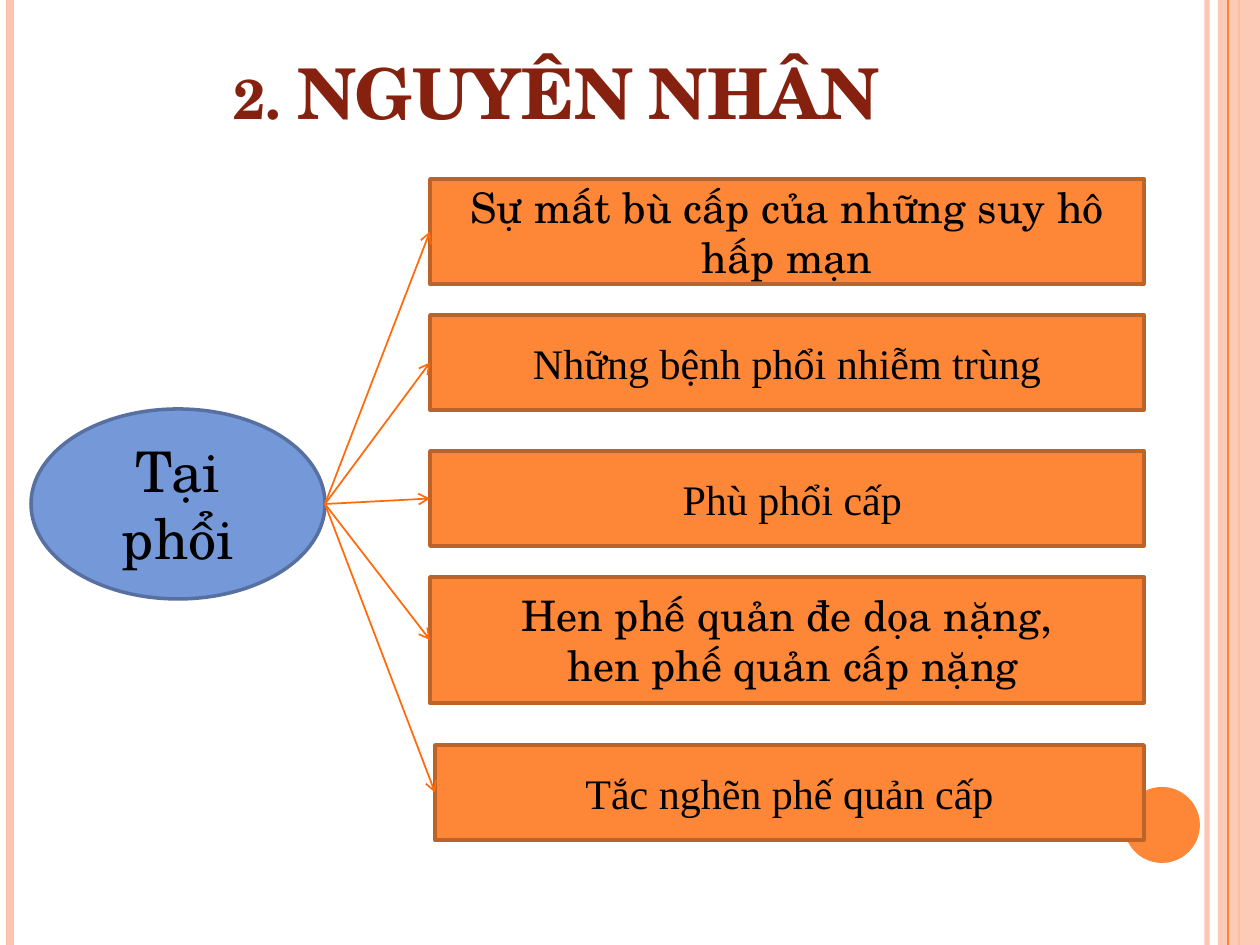
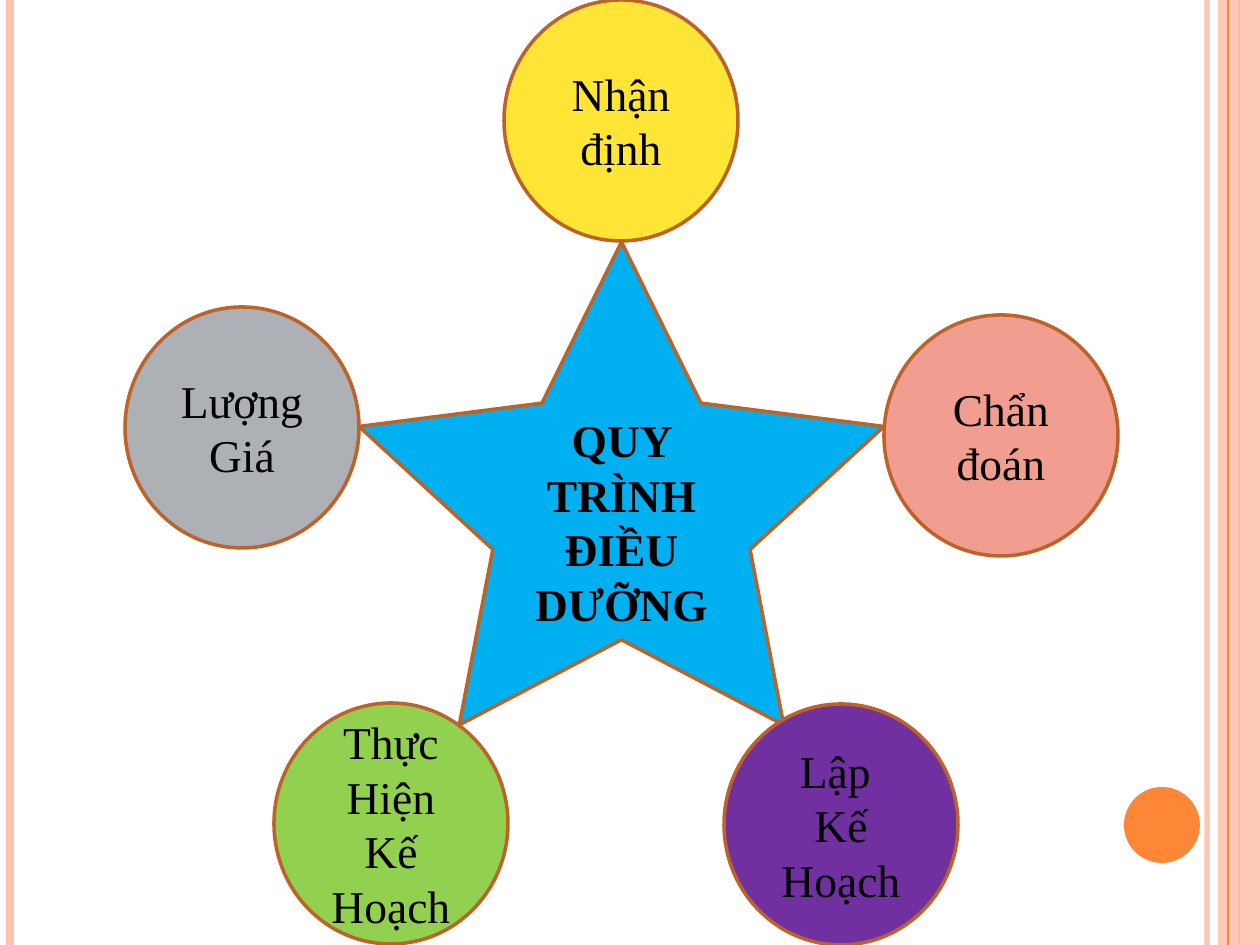
from dataclasses import dataclass
from lxml import etree
from pptx import Presentation
from pptx.dml.color import RGBColor
from pptx.enum.shapes import MSO_CONNECTOR, MSO_SHAPE
from pptx.enum.text import MSO_ANCHOR, MSO_AUTO_SIZE, PP_ALIGN
from pptx.oxml.ns import qn
from pptx.util import Emu, Pt

RECT, OVAL, STAR = MSO_SHAPE.RECTANGLE, MSO_SHAPE.OVAL, MSO_SHAPE.STAR_5_POINT
NODE = MSO_SHAPE.FLOWCHART_CONNECTOR
STRAIGHT = MSO_CONNECTOR.STRAIGHT
MIDDLE, BOTTOM = MSO_ANCHOR.MIDDLE, MSO_ANCHOR.BOTTOM
CENTER, NO_FIT = PP_ALIGN.CENTER, MSO_AUTO_SIZE.NONE
TITLE_ONLY, BLANK = 5, 6
LEFT_SIDE = 1


@dataclass(frozen=True)
class Theme:
    orange: str = "FE8637"
    edge: str = "BC6329"
    arrow: str = "FF6B0A"
    peach: str = "FEC3AE"
    title: str = "862110"
    blue: str = "7598D9"
    blue_edge: str = "5770A1"
    star: str = "00B0F0"
    text: str = "000000"
    serif: str = "TeX Gyre Schola"
    roman: str = "Times New Roman"
    title_size: int = 40
    hub_size: int = 32
    cause_size: int = 24
    step_size: int = 26
    outline: int = 2


T = Theme()
PX_PER_INCH = 126
SLIDE_W, SLIDE_H = 1260, 945

TITLE = "2. NGUYÊN NHÂN"
TITLE_BOX = (42, 42, 1029, 98)
HUB = "Tại phổi"
HUB_BOX = (31, 409, 294, 190)
CAUSE_RIGHT = 1144
CAUSES = [
    (["Sự mất bù cấp của những suy hô hấp mạn"], T.serif, 430, 179, 105),
    (["Những bệnh phổi nhiễm trùng"], T.roman, 430, 315, 95),
    ([" Phù phổi cấp"], T.roman, 430, 451, 95),
    (["Hen phế quản đe dọa nặng,", " hen phế quản cấp nặng"], T.serif, 430, 577, 126),
    (["Tắc nghẽn phế quản cấp"], T.roman, 435, 745, 95),
]

CYCLE = "QUY TRÌNH ĐIỀU DƯỠNG"
STAR_BOX = (359, 242, 525, 483)
STAR_DEPTH = 0.245
STEP_SIZE = (234, 241)
STEPS = [
    (["Nhận định"], "FFE636", 504, 0),
    (["Chẩn đoán"], "F19E91", 884, 315),
    (["Lập ", "Kế Hoạch"], "7030A0", 724, 704),
    (["Lượng Giá"], "ADB0B5", 125, 307),
    (["Thực Hiện", "Kế Hoạch"], "92D050", 274, 703),
]

RIGHT_BAND = (1218, 0, 42, SLIDE_H)
BAND_OPACITY = 87
DOT_BOX = (1124, 787, 76, 76)
BACK_RULES = [(1207, T.peach, 3, 93), (10, T.peach, 4.5, 100), (1239, T.orange, 1.5, 100)]
FRONT_RULES = [(1228, T.orange, 0.75, 100)]


def px(n):
    return Emu(round(n * 914400 / PX_PER_INCH))


def rgb(value):
    return RGBColor.from_string(value)


def set_opacity(shape, percent):
    if percent < 100:
        color = next(shape.element.spPr.iter(qn("a:srgbClr")))
        etree.SubElement(color, qn("a:alpha")).set("val", str(percent * 1000))


def write(shape, paragraphs, *, font, size, color=T.text, bold=False, small_caps=False, anchor=MIDDLE):
    tf = shape.text_frame
    tf.word_wrap = True
    tf.auto_size = NO_FIT
    tf.vertical_anchor = anchor
    for i, text in enumerate(paragraphs):
        p = tf.add_paragraph() if i else tf.paragraphs[0]
        p.alignment = CENTER
        r = p.add_run()
        r.text = text
        r.font.name, r.font.size, r.font.bold = font, Pt(size), bold
        r.font.color.rgb = rgb(color)
        if small_caps:
            r.font._element.set("cap", "small")


def add_shape(s, kind, box, fill, edge=None):
    sp = s.shapes.add_shape(kind, *map(px, box))
    sp.shadow.inherit = False
    sp.fill.solid()
    sp.fill.fore_color.rgb = rgb(fill)
    if edge:
        sp.line.color.rgb = rgb(edge)
        sp.line.width = Pt(T.outline)
    else:
        sp.line.fill.background()
    return sp


def add_line(s, start, end, color, width, arrow=False):
    line = s.shapes.add_connector(STRAIGHT, *map(px, (*start, *end)))
    line.line.color.rgb = rgb(color)
    line.line.width = Pt(width)
    if arrow:
        etree.SubElement(line.line._get_or_add_ln(), qn("a:tailEnd")).set("type", "arrow")
    etree.SubElement(line.element.spPr, qn("a:effectLst"))
    return line


def add_rules(s, rules):
    lines = []
    for x, color, width, opacity in rules:
        line = add_line(s, (x, 0), (x, SLIDE_H), color, width)
        set_opacity(line, opacity)
        lines.append(line)
    return lines


def decorate_master(prs, s):
    parts = add_rules(s, BACK_RULES)
    band = add_shape(s, RECT, RIGHT_BAND, T.peach)
    set_opacity(band, BAND_OPACITY)
    parts += [band, *add_rules(s, FRONT_RULES), add_shape(s, OVAL, DOT_BOX, T.orange)]
    tree = prs.slide_master.shapes.element
    for i, part in enumerate(parts):
        next(part.element.iter(qn("p:cNvPr"))).set("id", str(100 + i))
        tree.insert(2 + i, part.element)


def build_causes(s):
    title = s.shapes.title
    title.left, title.top, title.width, title.height = map(px, TITLE_BOX)
    write(title, [TITLE], font=T.serif, size=T.title_size, color=T.title,
          bold=True, small_caps=True, anchor=BOTTOM)
    hub = add_shape(s, OVAL, HUB_BOX, T.blue, T.blue_edge)
    write(hub, [HUB], font=T.serif, size=T.hub_size)
    boxes = []
    for paragraphs, font, x, y, h in CAUSES:
        box = add_shape(s, RECT, (x, y, CAUSE_RIGHT - x, h), T.orange, T.edge)
        write(box, paragraphs, font=font, size=T.cause_size)
        boxes.append(box)
    left, top, width, height = HUB_BOX
    start = (left + width, top + height / 2)
    for box, (_, _, x, y, h) in zip(boxes, CAUSES):
        arrow = add_line(s, start, (x, y + h / 2), T.arrow, 1, arrow=True)
        arrow.end_connect(box, LEFT_SIDE)


def build_cycle(s):
    star = add_shape(s, STAR, STAR_BOX, T.star, T.edge)
    star.adjustments[0] = STAR_DEPTH
    write(star, [CYCLE], font=T.roman, size=T.step_size, bold=True)
    for paragraphs, fill, x, y in STEPS:
        step = add_shape(s, NODE, (x, y, *STEP_SIZE), fill, T.edge)
        write(step, paragraphs, font=T.roman, size=T.step_size)


def main():
    prs = Presentation()
    prs.slide_width, prs.slide_height = px(SLIDE_W), px(SLIDE_H)
    causes = prs.slides.add_slide(prs.slide_layouts[TITLE_ONLY])
    decorate_master(prs, causes)
    build_causes(causes)
    build_cycle(prs.slides.add_slide(prs.slide_layouts[BLANK]))
    prs.save("out.pptx")


if __name__ == "__main__":
    main()
